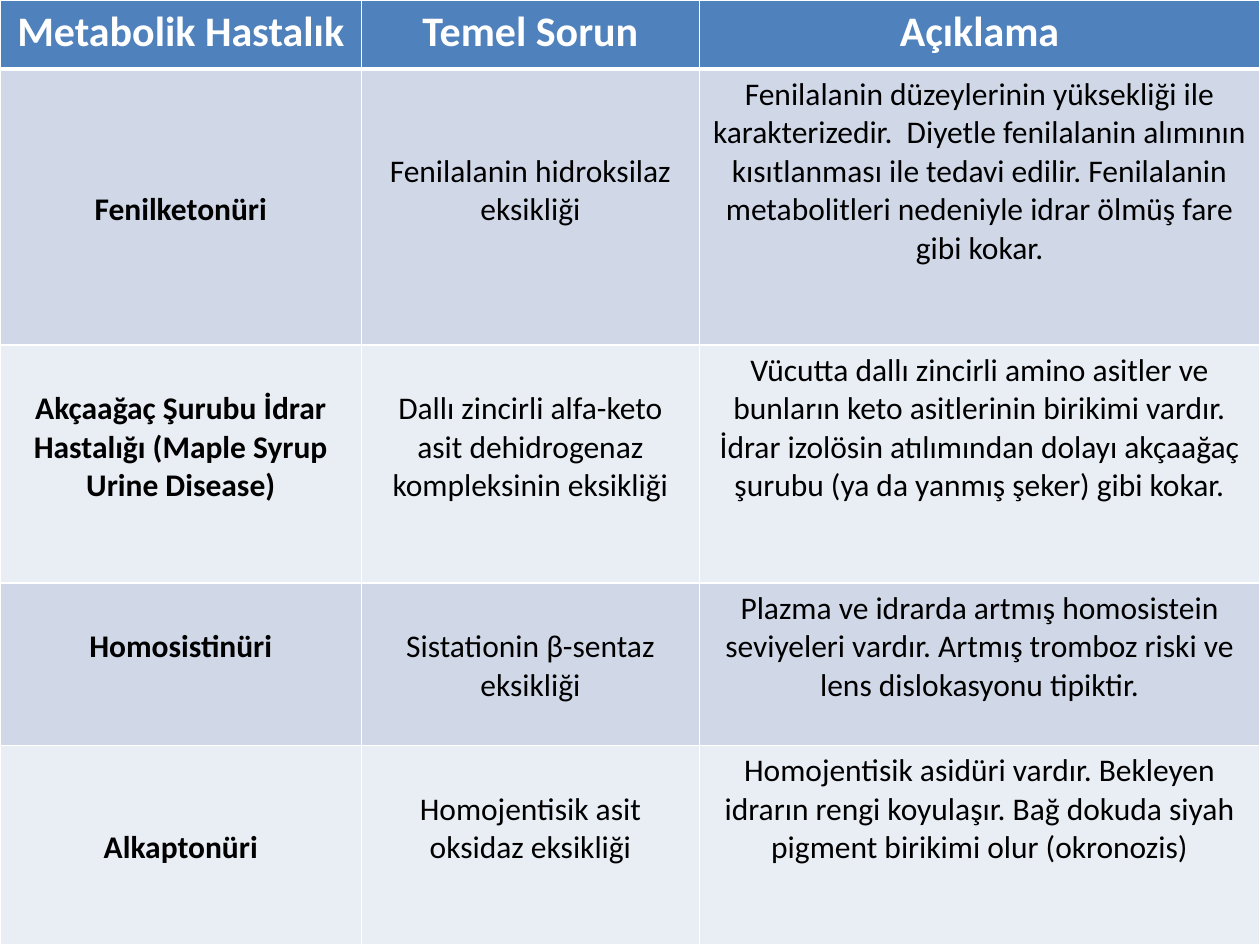
"""Builds a one-slide table of metabolic diseases, their cause and a description."""
from dataclasses import dataclass

from lxml.etree import SubElement
from pptx import Presentation
from pptx.dml.color import RGBColor
from pptx.enum.text import PP_ALIGN
from pptx.oxml.ns import qn
from pptx.util import Inches, Pt

HEADINGS = ("Metabolik Hastalık", "Temel Sorun", "Açıklama")
DISEASES = (
    ("Fenilketonüri",
     "Fenilalanin hidroksilaz eksikliği",
     "Fenilalanin düzeylerinin yüksekliği ile karakterizedir.  Diyetle fenilalanin "
     "alımının kısıtlanması ile tedavi edilir. Fenilalanin metabolitleri nedeniyle "
     "idrar ölmüş fare gibi kokar."),
    ("Akçaağaç Şurubu İdrar Hastalığı (Maple Syrup Urine Disease)",
     "Dallı zincirli alfa-keto asit dehidrogenaz kompleksinin eksikliği",
     "Vücutta dallı zincirli amino asitler ve bunların keto asitlerinin birikimi "
     "vardır. İdrar izolösin atılımından dolayı akçaağaç şurubu (ya da yanmış şeker) "
     "gibi kokar."),
    ("Homosistinüri",
     "Sistationin β-sentaz eksikliği",
     "Plazma ve idrarda artmış homosistein seviyeleri vardır. Artmış tromboz riski "
     "ve lens dislokasyonu tipiktir."),
    ("Alkaptonüri",
     "Homojentisik asit oksidaz eksikliği",
     "Homojentisik asidüri vardır. Bekleyen idrarın rengi koyulaşır. Bağ dokuda "
     "siyah pigment birikimi olur (okronozis)"),
)
LINES_ABOVE = ((0, 0, 0), (3, 2, 0), (1, 1, 0), (1, 1, 0), (2, 1, 0))
COLUMN_SHARES = (0.287, 0.268, 0.445)
ROW_SHARES = (0.073, 0.292, 0.252, 0.172, 0.211)


@dataclass(frozen=True)
class Theme:
    """Colours, type sizes and spacing of the slide."""
    font: str = "Calibri"
    heading_size: int = 24
    body_size: int = 18
    heading_fill: str = "4F81BD"
    bands: tuple = ("D0D8E8", "E9EDF4")
    light: str = "FFFFFF"
    dark: str = "000000"
    thin: int = 1
    thick: int = 3
    line_spacing: float = 1.22
    margin: float = 3.6


THEME = Theme()


def draw_borders(cell, row):
    """Give a cell white edges, with a thick rule under the headings."""
    edges = {
        "lnL": THEME.thin,
        "lnR": THEME.thin,
        "lnT": THEME.thick if row == 1 else THEME.thin,
        "lnB": THEME.thick if row == 0 else THEME.thin,
    }
    properties = cell._tc.get_or_add_tcPr()
    for edge, width in edges.items():
        line = SubElement(properties, qn(f"a:{edge}"), w=str(Pt(width)))
        fill = SubElement(line, qn("a:solidFill"))
        SubElement(fill, qn("a:srgbClr"), val=THEME.light)


def fill_cell(cell, text, row, column):
    """Write and format one table cell."""
    heading = row == 0
    draw_borders(cell, row)
    cell.fill.solid()
    band = THEME.heading_fill if heading else THEME.bands[(row - 1) % 2]
    cell.fill.fore_color.rgb = RGBColor.from_string(band)
    drop = LINES_ABOVE[row][column] * THEME.body_size * THEME.line_spacing
    cell.margin_top = Pt(THEME.margin + drop)
    cell.text = text
    para = cell.text_frame.paragraphs[0]
    para.alignment = PP_ALIGN.CENTER
    span = para.runs[0]
    formats = {
        "name": THEME.font,
        "size": Pt(THEME.heading_size if heading else THEME.body_size),
        "bold": heading or column == 0,
    }
    for name, value in formats.items():
        setattr(span.font, name, value)
    span.font.color.rgb = RGBColor.from_string(THEME.light if heading else THEME.dark)


def main():
    """Build and save the deck."""
    deck = Presentation()
    deck.slide_width, deck.slide_height = Inches(10), Inches(7.5)
    page = deck.slides.add_slide(deck.slide_layouts[6])
    records = (HEADINGS, *DISEASES)
    table = page.shapes.add_table(
        len(records), len(HEADINGS), 0, 0, deck.slide_width, deck.slide_height
    ).table
    for column, share in zip(table.columns, COLUMN_SHARES):
        column.width = int(deck.slide_width * share)
    for row, share in zip(table.rows, ROW_SHARES):
        row.height = int(deck.slide_height * share)
    for row, record in enumerate(records):
        for column, text in enumerate(record):
            fill_cell(table.cell(row, column), text, row, column)
    deck.save("out.pptx")


if __name__ == "__main__":
    main()
